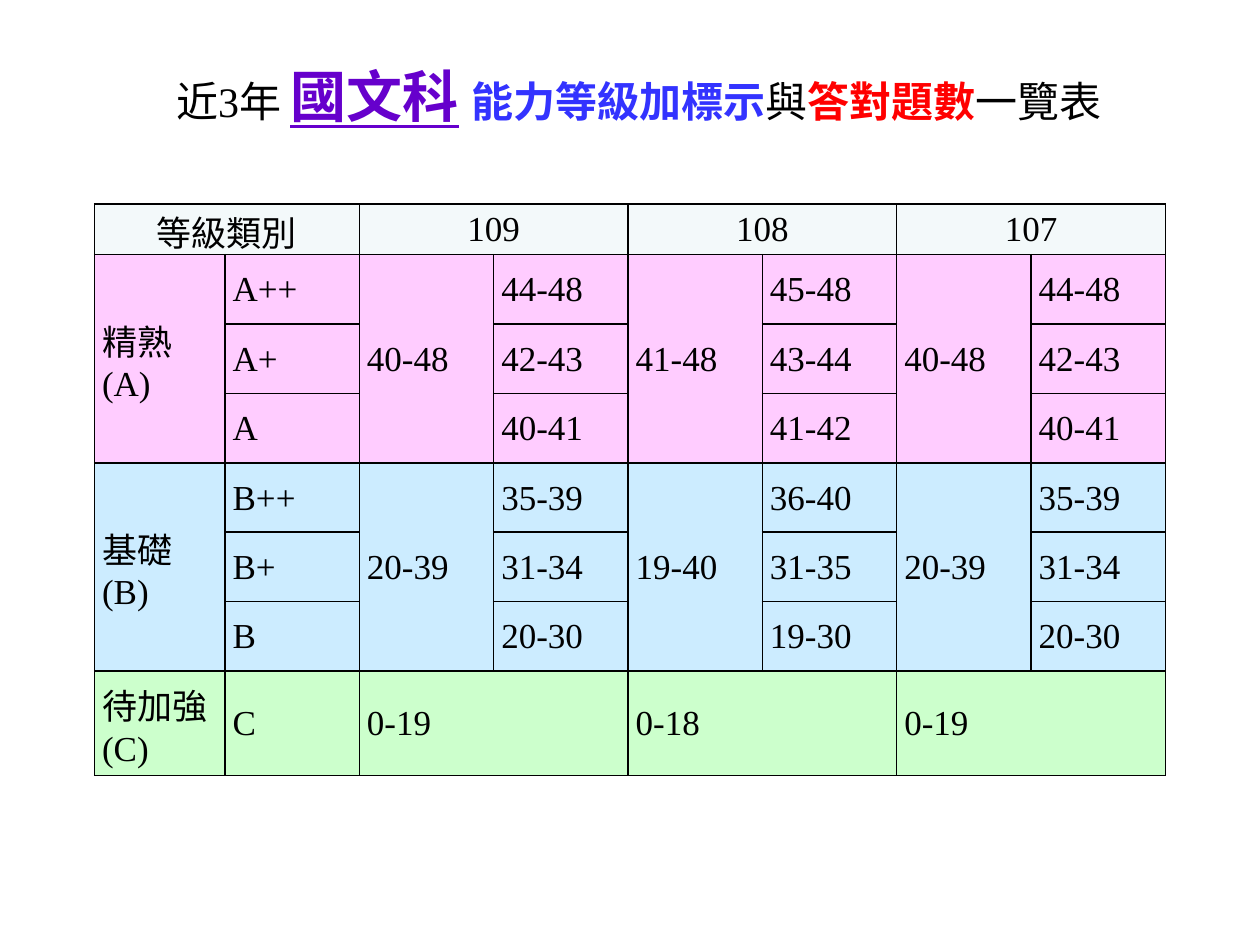
from lxml.etree import SubElement as Sub
from pptx import Presentation
from pptx.dml.color import RGBColor
from pptx.enum.text import MSO_ANCHOR as Anchor, MSO_AUTO_SIZE as Fit, PP_ALIGN as Align
from pptx.oxml.ns import qn
from pptx.util import Inches, Pt

FONT = "Times New Roman"
BLACK = "000000"
HEAD = "F3F9FA"
WIDE, HIGH = 10, 7.5

TITLE = [  # text, size, colour, bold, underline
    ("近3年 ", 24, BLACK, False, False),
    ("國文科", 32, "6600CC", True, True),
    (" ", 32, "6600CC", True, False),
    ("能力等級加標示", 24, "3333FF", True, False),
    ("與", 24, BLACK, False, False),
    ("答對題數", 24, "FF0000", True, False),
    ("一覽表", 24, BLACK, False, False),
]
YEARS = ["109", "108", "107"]
LEVELS = [  # name, fill, total of each year, grades with the range of each year
    ("精熟\n(A)", "FFCCFF", ["40-48", "41-48", "40-48"], [
        ("A++", ["44-48", "45-48", "44-48"]),
        ("A+", ["42-43", "43-44", "42-43"]),
        ("A", ["40-41", "41-42", "40-41"])]),
    ("基礎\n(B)", "CCECFF", ["20-39", "19-40", "20-39"], [
        ("B++", ["35-39", "36-40", "35-39"]),
        ("B+", ["31-34", "31-35", "31-34"]),
        ("B", ["20-30", "19-30", "20-30"])]),
    ("待加強\n(C)", "CCFFCC", ["0-19", "0-18", "0-19"], [("C", [])]),
]
COLS = [1.04] + [1.07] * 7
ROWS = [0.4] + [0.55] * 6 + [0.83]


def color(code):
    return RGBColor.from_string(code)


def add_title(slide, left, top, width, height):
    box = slide.shapes.add_textbox(*map(Inches, (left, top, width, height)))
    frame = box.text_frame
    frame.word_wrap = True
    frame.auto_size = Fit.SHAPE_TO_FIT_TEXT
    para = frame.paragraphs[0]
    para.alignment = Align.CENTER
    para._p.get_or_add_pPr().set("indent", str(Inches(0.14)))
    para.font.name = FONT
    for text, size, code, bold, under in TITLE:
        run = para.add_run()
        run.text = text
        font = run.font
        font.size, font.bold, font.underline = Pt(size), bold, under
        font.color.rgb = color(code)


def add_lines(cell):
    """Draw the four borders of a cell; call before its fill is set."""
    props = cell._tc.get_or_add_tcPr()
    for side in ("lnL", "lnR", "lnT", "lnB"):
        line = Sub(props, qn(f"a:{side}"), w=str(Pt(1)))
        Sub(Sub(line, qn("a:solidFill")), qn("a:srgbClr"), val=BLACK)


def style(cell, fill, align):
    add_lines(cell)
    cell.fill.solid()
    cell.fill.fore_color.rgb = color(fill)
    cell.vertical_anchor = Anchor.MIDDLE
    cell.margin_left = cell.margin_right = Inches(0.06)
    cell.margin_top, cell.margin_bottom = Inches(0.01), 0
    for para in cell.text_frame.paragraphs:
        para.alignment = align
        para.font.name, para.font.size = FONT, Pt(20)
        para.font.color.rgb = color(BLACK)


def add_scores(slide, left, top, width, height):
    table = slide.shapes.add_table(
        len(ROWS), len(COLS), *map(Inches, (left, top, width, height))).table
    for col, share in zip(table.columns, COLS):
        col.width = Inches(width * share / sum(COLS))
    for row, share in zip(table.rows, ROWS):
        row.height = Inches(height * share / sum(ROWS))

    def put(row, col, text, down=1, across=1):
        cell = table.cell(row, col)
        if down * across > 1:
            cell.merge(table.cell(row + down - 1, col + across - 1))
        cell.text = text

    for i, text in enumerate(["等級類別"] + YEARS):
        put(0, 2 * i, text, across=2)
    fills = [HEAD]
    for name, fill, totals, grades in LEVELS:
        first, count = len(fills), len(grades)
        put(first, 0, name, down=count)
        for i, total in enumerate(totals):
            put(first, 2 + 2 * i, total, down=count, across=1 if count > 1 else 2)
        for row, (grade, marks) in enumerate(grades, first):
            put(row, 1, grade)
            for i, mark in enumerate(marks):
                put(row, 3 + 2 * i, mark)
        fills += [fill] * count

    for row, fill in enumerate(fills):
        for col in range(len(COLS)):
            style(table.cell(row, col), fill, Align.LEFT if row else Align.CENTER)


def main():
    deck = Presentation()
    deck.slide_width, deck.slide_height = Inches(WIDE), Inches(HIGH)
    slide = deck.slides.add_slide(deck.slide_layouts[6])
    add_title(slide, 0.051 * WIDE, 0.059 * HIGH, 0.898 * WIDE, 0.085 * HIGH)
    add_scores(slide, 0.075 * WIDE, 0.216 * HIGH, 0.85 * WIDE, 0.605 * HIGH)
    deck.save("out.pptx")


if __name__ == "__main__":
    main()
